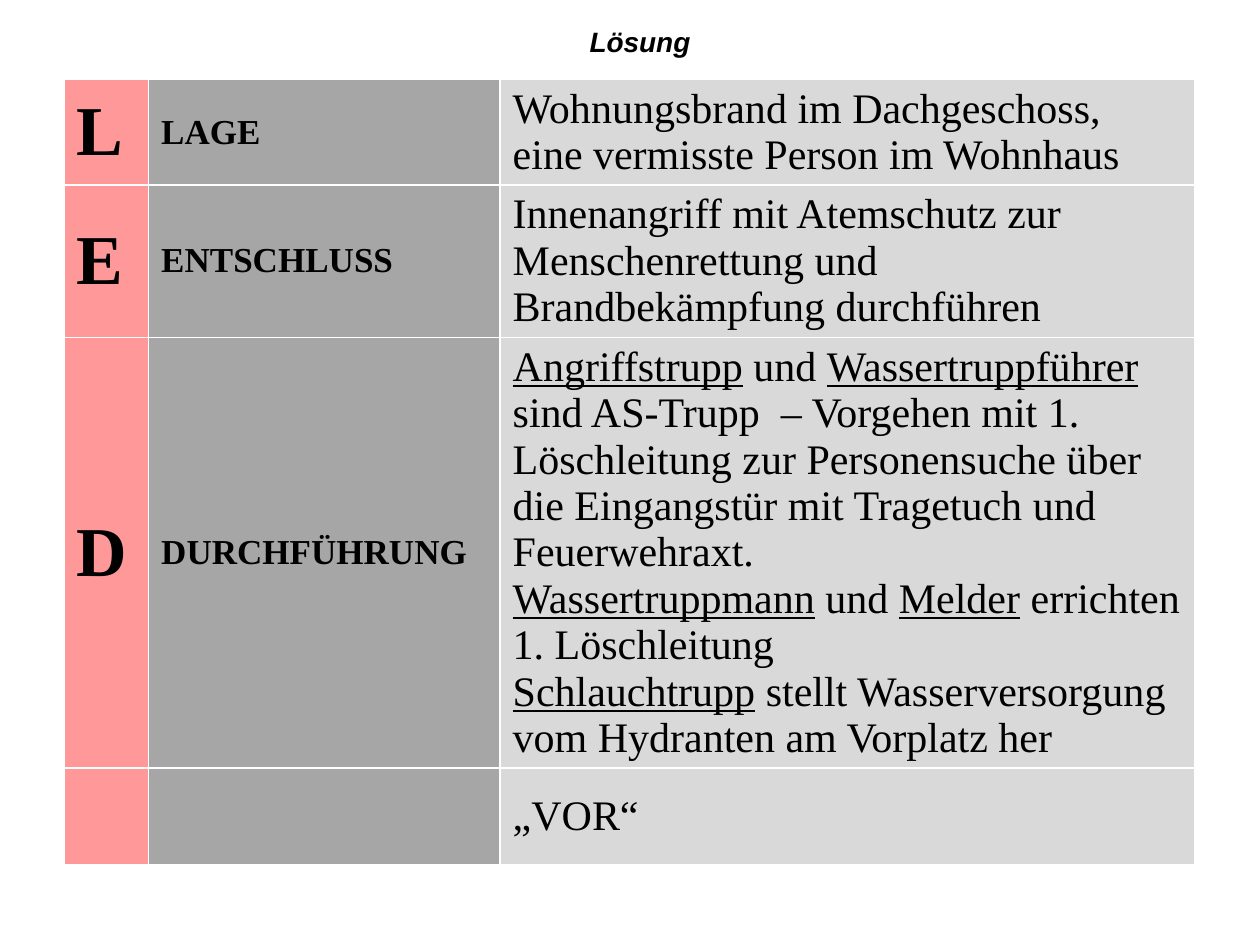
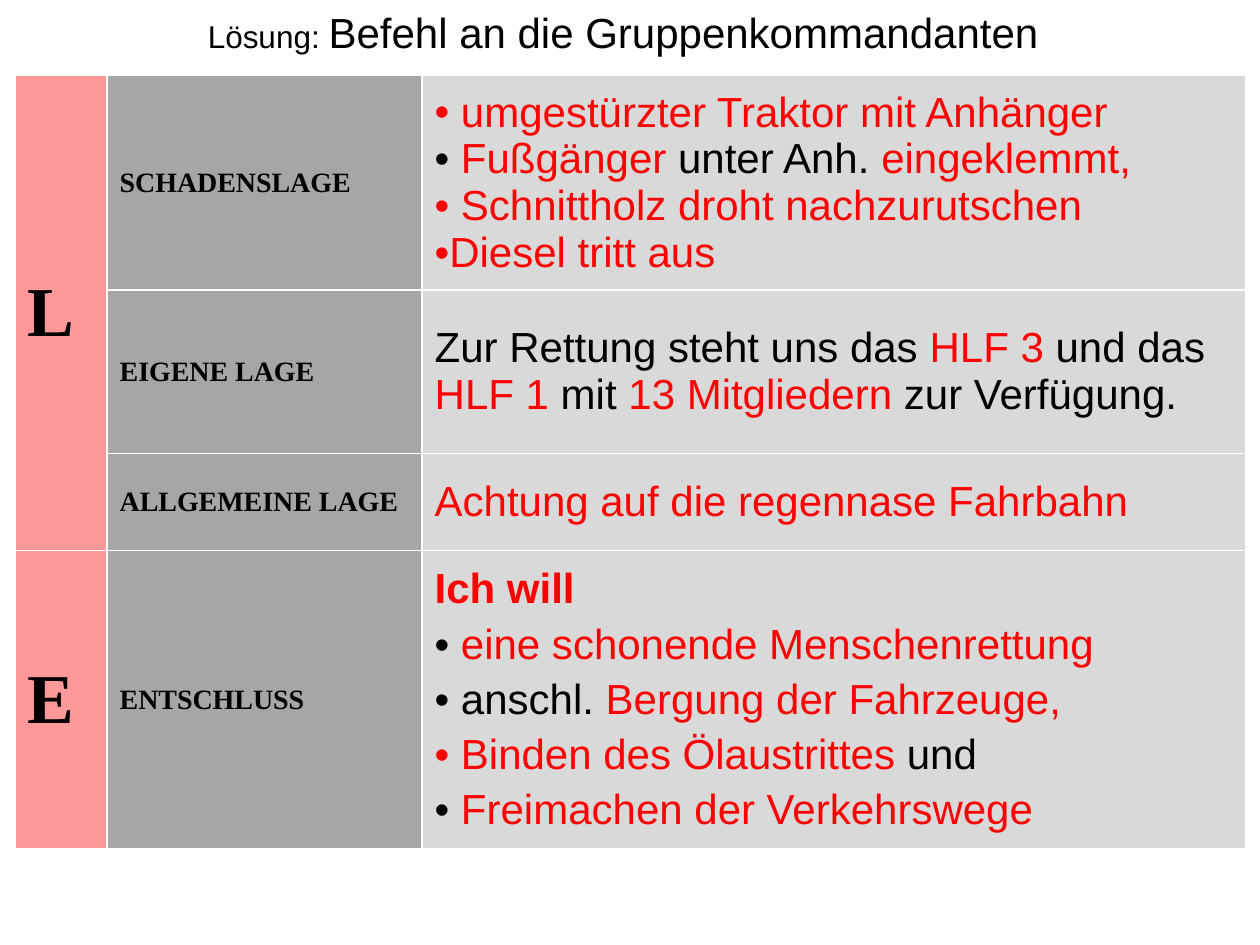
from dataclasses import dataclass
from lxml.etree import SubElement
from pptx import Presentation
from pptx.dml.color import RGBColor as Color
from pptx.enum.shapes import MSO_SHAPE as Preset
from pptx.enum.text import MSO_ANCHOR as Anchor, MSO_AUTO_SIZE as AutoSize, PP_ALIGN as Align
from pptx.oxml.ns import qn
from pptx.util import Inches, Pt

GRID_STEP = 0.1
GRID_COLUMNS, GRID_ROWS = 100, 75


@dataclass(frozen=True)
class Theme:
    sans: str = "Arial"
    serif: str = "Times New Roman"
    black: str = "000000"
    white: str = "FFFFFF"
    red: str = "FF0000"
    columns: tuple = ("FF9999", "A6A6A6", "D9D9D9")
    letter_size: int = 40
    body_size: int = 24
    border_width: int = 1


THEME = Theme()


@dataclass(frozen=True)
class TableStyle:
    label_size: int
    body: dict


@dataclass(frozen=True)
class Row:
    height: float
    letter: str | None
    label: str
    lines: tuple
    bullets_from: int | None = None
    space_before: float = 0
    bold_first: bool = False


def grid(*steps):
    return [Inches(step * GRID_STEP) for step in steps]


def write_text(paragraph, text, size=THEME.body_size, font=THEME.sans, color=THEME.black,
               accent_color=None, accent_size=None, accent_underline=False,
               bold=False, italic=False, align=None, space_before=0, bullet=False):
    paragraph.alignment = align
    if space_before:
        paragraph.space_before = Pt(space_before)
    if bullet:
        properties = paragraph._p.get_or_add_pPr()
        properties.set("marL", "0")
        properties.set("indent", "0")
        SubElement(properties, qn("a:buFont")).set("typeface", THEME.sans)
        SubElement(properties, qn("a:buChar")).set("char", "•")
    for index, part in enumerate(text.split("|")):
        if not part:
            continue
        accented = index % 2 == 1
        run = paragraph.add_run()
        run.text = part
        run.font.name = font
        run.font.size = Pt(accent_size if accented and accent_size else size)
        run.font.color.rgb = Color.from_string(accent_color if accented and accent_color else color)
        run.font.bold = bold
        run.font.italic = italic
        run.font.underline = accented and accent_underline


def add_title_band(slide, place, text, **text_format):
    shape = slide.shapes.add_shape(Preset.RECTANGLE, *grid(*place))
    shape.shadow.inherit = False
    shape.fill.solid()
    shape.fill.fore_color.rgb = Color.from_string(THEME.white)
    shape.line.fill.background()
    shape.text_frame.vertical_anchor = Anchor.MIDDLE
    write_text(shape.text_frame.paragraphs[0], text, align=Align.CENTER, **text_format)


def add_title_text(slide, place, text, **text_format):
    frame = slide.shapes.add_textbox(*grid(*place)).text_frame
    frame.word_wrap = True
    frame.auto_size = AutoSize.SHAPE_TO_FIT_TEXT
    write_text(frame.paragraphs[0], text, align=Align.CENTER, **text_format)


def format_cell(cell, fill):
    properties = cell._tc.get_or_add_tcPr()
    for side in ("lnL", "lnR", "lnT", "lnB"):
        line = SubElement(properties, qn(f"a:{side}"), w=str(Pt(THEME.border_width)))
        SubElement(SubElement(line, qn("a:solidFill")), qn("a:srgbClr"), val=THEME.white)
    cell.fill.solid()
    cell.fill.fore_color.rgb = Color.from_string(fill)
    cell.vertical_anchor = Anchor.MIDDLE


def fill_body(cell, row, style):
    for index, line in enumerate(row.lines):
        frame = cell.text_frame
        paragraph = frame.add_paragraph() if index else frame.paragraphs[0]
        write_text(paragraph, line, **style.body,
                   bold=row.bold_first and index == 0,
                   space_before=row.space_before,
                   bullet=row.bullets_from is not None and index >= row.bullets_from)


def add_order_table(slide, left, top, widths, rows, style):
    place = grid(left, top, sum(widths), sum(row.height for row in rows))
    table = slide.shapes.add_table(len(rows), len(widths), *place).table
    table.first_row = False
    table.horz_banding = False
    for column, width in zip(table.columns, grid(*widths)):
        column.width = width
    letter_cell = None
    for index, row in enumerate(rows):
        table.rows[index].height = grid(row.height)[0]
        cells = [table.cell(index, column) for column in range(len(widths))]
        for cell, fill in zip(cells, THEME.columns):
            format_cell(cell, fill)
        if row.letter is not None:
            letter_cell = cells[0]
            write_text(letter_cell.text_frame.paragraphs[0], row.letter,
                       size=THEME.letter_size, font=THEME.serif, bold=True)
        elif index + 1 == len(rows) or rows[index + 1].letter is not None:
            letter_cell.merge(cells[0])
        write_text(cells[1].text_frame.paragraphs[0], row.label,
                   size=style.label_size, font=THEME.serif, bold=True)
        fill_body(cells[2], row, style)


def add_fire_slide(presentation):
    slide = presentation.slides.add_slide(presentation.slide_layouts[6])
    add_title_band(slide, (35.8, 1.3, 30, 4), "Lösung", size=16, bold=True, italic=True)
    rows = [
        Row(8.3, "L", "LAGE", (
            "Wohnungsbrand im Dachgeschoss,",
            "eine vermisste Person im Wohnhaus")),
        Row(12.1, "E", "ENTSCHLUSS", (
            "Innenangriff mit Atemschutz zur Menschenrettung und",
            "Brandbekämpfung durchführen")),
        Row(34.2, "D", "DURCHFÜHRUNG", (
            "|Angriffstrupp| und |Wassertruppführer| sind AS-Trupp  – Vorgehen mit 1. "
            "Löschleitung zur Personensuche über die Eingangstür mit Tragetuch und Feuerwehraxt.",
            "|Wassertruppmann| und |Melder| errichten 1. Löschleitung",
            "|Schlauchtrupp| stellt Wasserversorgung vom Hydranten am Vorplatz her")),
        Row(7.7, "", "", ("„VOR“",)),
    ]
    style = TableStyle(20, {"font": THEME.serif, "accent_underline": True})
    add_order_table(slide, 5.1, 6.3, (6.7, 27.9, 55.1), rows, style)


def add_accident_slide(presentation):
    slide = presentation.slides.add_slide(presentation.slide_layouts[6])
    add_title_text(slide, (1.2, 0, 96.5, 5), "Lösung: |Befehl an die Gruppenkommandanten",
                   size=18, accent_size=24)
    rows = [
        Row(17, "L", "SCHADENSLAGE", (
            "| umgestürzter Traktor mit Anhänger",
            " |Fußgänger| unter Anh. |eingeklemmt,",
            "| Schnittholz droht nachzurutschen",
            "|Diesel tritt aus"), bullets_from=0),
        Row(13, None, "EIGENE LAGE", (
            "Zur Rettung steht uns das| HLF 3 |und das| HLF 1 |mit| 13 Mitgliedern |zur Verfügung.",),
            space_before=4.8),
        Row(7.7, None, "ALLGEMEINE LAGE", ("|Achtung auf die regennase Fahrbahn",),
            space_before=4.8),
        Row(23.6, "E", "ENTSCHLUSS", (
            "|Ich will",
            " |eine schonende Menschenrettung",
            " anschl. |Bergung der Fahrzeuge,",
            "| Binden des Ölaustrittes |und",
            " |Freimachen der Verkehrswege"),
            bullets_from=1, space_before=4.8, bold_first=True),
    ]
    style = TableStyle(16, {"accent_color": THEME.red})
    add_order_table(slide, 1.2, 6, (7.3, 25, 65.4), rows, style)


def main():
    presentation = Presentation()
    presentation.slide_width, presentation.slide_height = grid(GRID_COLUMNS, GRID_ROWS)
    add_fire_slide(presentation)
    add_accident_slide(presentation)
    presentation.save("out.pptx")


if __name__ == "__main__":
    main()
